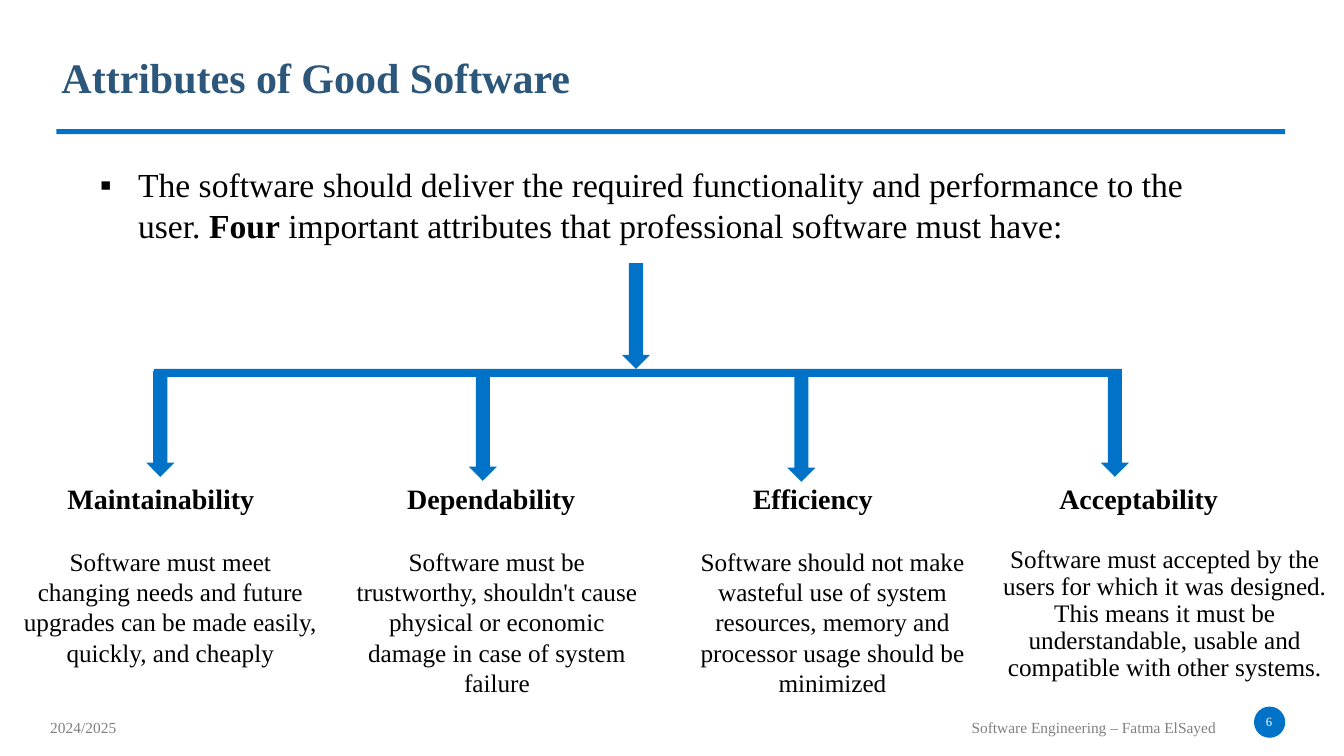
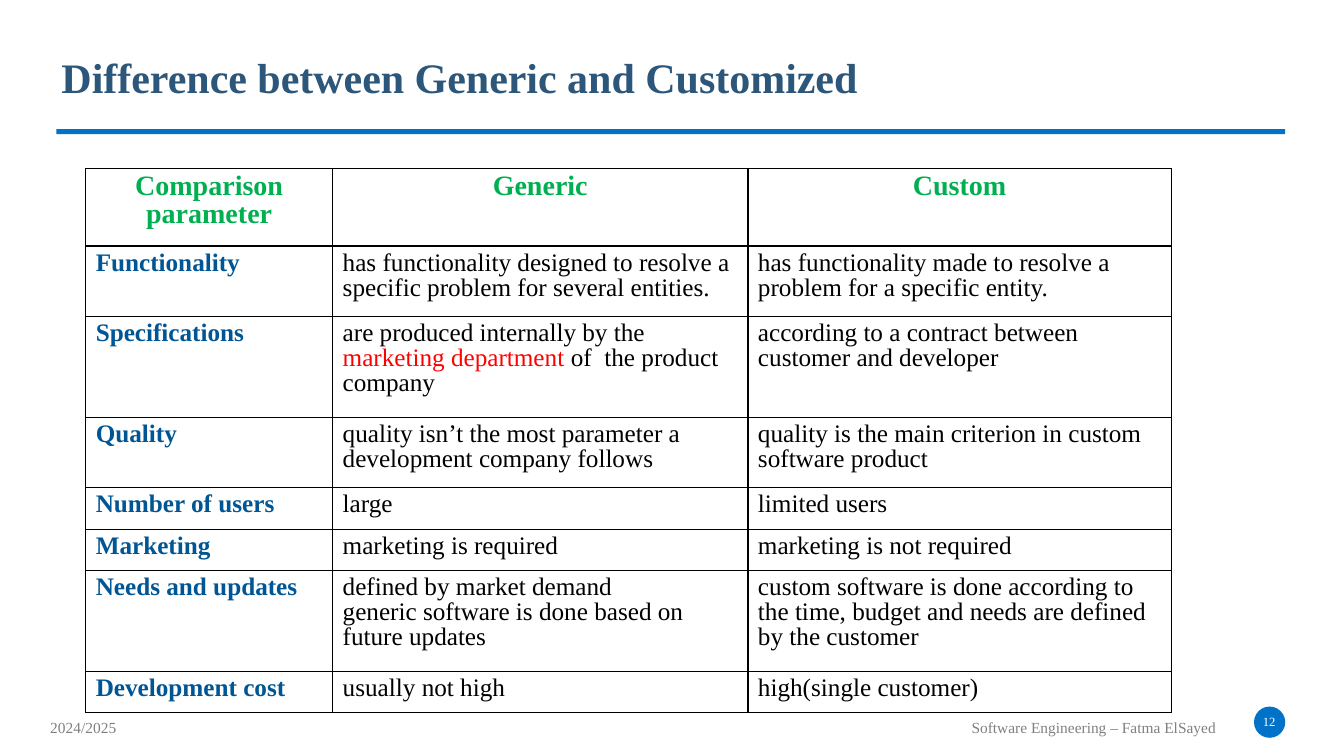
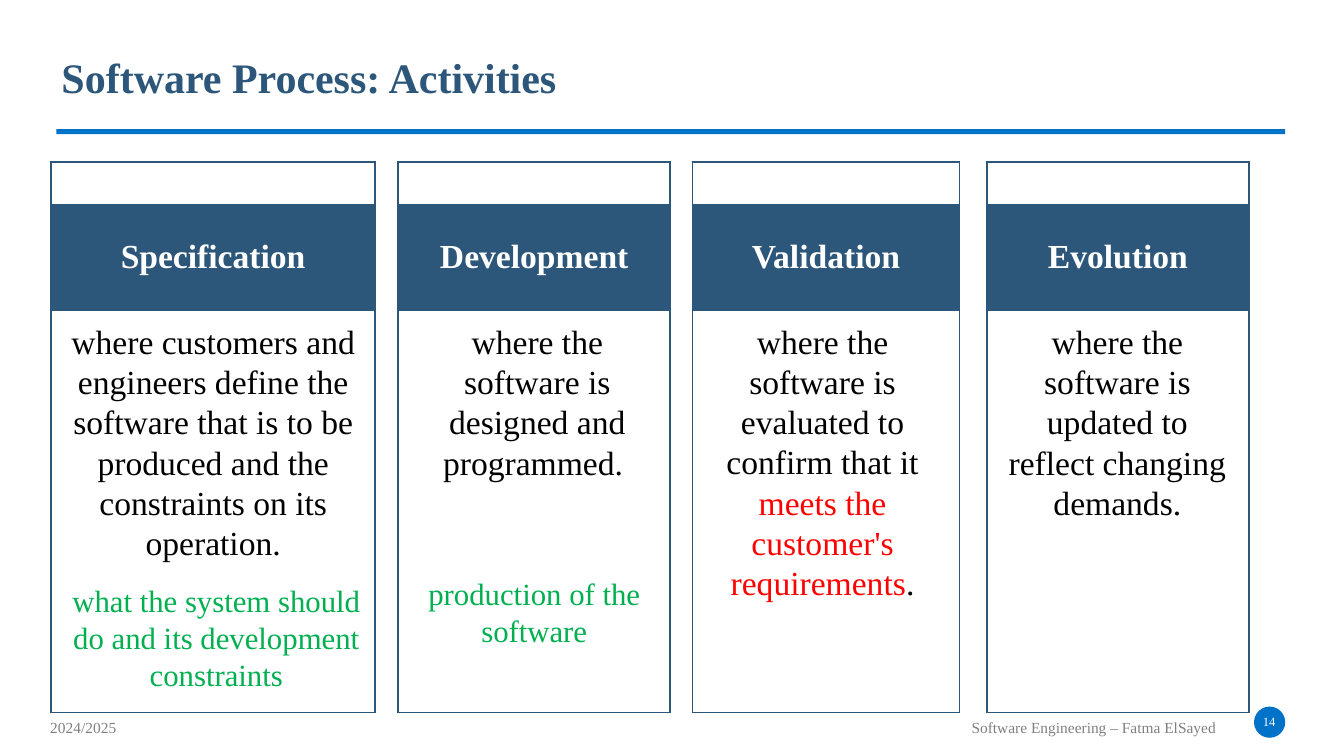
import collections
import dataclasses

import lxml.etree
import pptx
import pptx.dml.color
import pptx.enum.shapes
import pptx.enum.text
import pptx.oxml.ns
import pptx.util

Box = collections.namedtuple("Box", "x y w h")
Shape = pptx.enum.shapes.MSO_SHAPE
Align = pptx.enum.text.PP_ALIGN
Anchor = pptx.enum.text.MSO_ANCHOR
qn = pptx.oxml.ns.qn


@dataclasses.dataclass(frozen=True)
class Theme:
    """Colours, type sizes and the grid pitch of the deck."""
    font: str = "Times New Roman"
    blue: str = "0072C7"
    navy: str = "2C567A"
    label: str = "005695"
    green: str = "00B050"
    red: str = "FF0000"
    grey: str = "808080"
    black: str = "000000"
    white: str = "FFFFFF"
    title: int = 30
    lead: int = 24
    note: int = 22
    head: int = 20
    text: int = 18
    foot: int = 11
    page: int = 9
    tight: float = 0.9
    pitch: float = 0.1
    cols: float = 133.33
    rows: int = 75


T = Theme()
NO_STYLE = "{2D5ABB26-0587-4C30-8999-92F81FD0307C}"

TRAITS = [
    ("Maintainability", Box(5.7, 47.3, 20.7, 4.4), (14.5, 36.8), Box(1.3, 53.7, 31.2, 13.1), 1,
     "Software must meet changing needs and future upgrades can be made easily, quickly, and cheaply"),
    ("Dependability", Box(39.4, 47.3, 18.8, 4.4), (46.5, 37.2), Box(33.8, 53.7, 31, 16.2), 1,
     "Software must be trustworthy, shouldn't cause physical or economic damage in case of system failure"),
    ("Efficiency", Box(73.7, 47.3, 14, 4.4), (78.1, 37.3), Box(66.6, 53.7, 32, 16.2), 1,
     "Software should not make wasteful use of system resources, memory and processor usage should be minimized"),
    ("Acceptability", Box(104.1, 47.3, 17.9, 4.4), (109.2, 36.8), Box(97.7, 53.7, 35.7, 14.6), T.tight,
     "Software must accepted by the users for which it was designed. This means it must be "
     "understandable, usable and compatible with other systems."),
]

ROWS = [
    ("Comparison parameter", "Generic", "Custom"),
    ("Functionality", "has functionality designed to resolve a specific problem for several entities.",
     "has functionality made to resolve a problem for a specific entity."),
    ("Specifications",
     [[("are produced internally by the ", {}), ("marketing department ", {"color": T.red}),
       ("of  the product company", {})]],
     "according to a contract between customer and developer"),
    ("Quality", "quality isn’t the most parameter a development company follows",
     "quality is the main criterion in custom software product"),
    ("Number of users", "large", "limited users"),
    ("Marketing", "marketing is required", "marketing is not required"),
    ("Needs and updates",
     [[("defined by market demand", {})], [("generic software is done based on future updates", {})]],
     "custom software is done according to the time, budget and needs are defined by the customer"),
    ("Development cost", "usually not high", "high(single customer)"),
]

STEPS = [
    ("Specification", Box(5.1, 16.1, 32.1, 54.5), 4.2, Box(-0.9, 15.2, 33.9, 25.2),
     "where customers and engineers define the software that is to be produced and the constraints on its operation.",
     Box(-0.6, 41.1, 33.9, 12.1), "what the system should do and its development constraints"),
    ("Development", Box(39.5, 16.1, 27, 54.5), 3.5, Box(0.7, 15.2, 26.2, 21.2),
     "where the software is designed and programmed. ",
     Box(1.2, 40.4, 24.6, 8.4), "production of the software"),
    ("Validation", Box(68.7, 16.1, 26.5, 54.5), 3.4, Box(-0.7, 15.2, 27.2, 29.3),
     [[("where the software is evaluated to confirm that it ", {}),
       ("meets the customer's requirements", {"color": T.red}), (".", {})]], None, None),
    ("Evolution", Box(97.9, 16.1, 26, 54.5), 3.4, Box(0.8, 15.2, 24.3, 21.2),
     "where the software is updated to reflect changing demands.", None, None),
]


def unit(n):
    """Turn a count of grid cells into a length."""
    return pptx.util.Inches(n * T.pitch)


def spot(box):
    """Turn a grid box into four lengths."""
    return [unit(n) for n in box]


def shift(box, base):
    """Move a box by the corner of its base."""
    return Box(box.x + base.x, box.y + base.y, box.w, box.h)


def rgb(code):
    """Read a hex colour."""
    return pptx.dml.color.RGBColor.from_string(code)


def write(frame, text, size, color=T.black, bold=False, align=Align.LEFT, line=1):
    """Fill a text frame with plain text or with paragraphs of styled runs."""
    paras = [[(text, {})]] if isinstance(text, str) else text
    for i, parts in enumerate(paras):
        para = frame.add_paragraph() if i else frame.paragraphs[0]
        para.alignment = align
        para.line_spacing = line
        para.space_before = pptx.util.Pt(0)
        for words, style in parts:
            run = para.add_run()
            run.text = words
            run.font.name = T.font
            run.font.size = pptx.util.Pt(size)
            run.font.bold = style.get("bold", bold)
            run.font.color.rgb = rgb(style.get("color", color))


def label(slide, box, text, size, wrap=True, inset=True, anchor=Anchor.TOP, **style):
    """Add a text box."""
    shape = slide.shapes.add_textbox(*spot(box))
    frame = shape.text_frame
    frame.word_wrap = wrap
    frame.vertical_anchor = anchor
    if not inset:
        clear(frame)
    write(frame, text, size, **style)
    return shape


def clear(frame):
    """Drop the insets of a text frame."""
    frame.margin_left = frame.margin_right = frame.margin_top = frame.margin_bottom = 0


def solid(slide, kind, box):
    """Add a plain blue shape."""
    shape = slide.shapes.add_shape(kind, *spot(box))
    shape.shadow.inherit = False
    shape.fill.solid()
    shape.fill.fore_color.rgb = rgb(T.blue)
    shape.line.fill.background()
    return shape


def brand(deck, slide):
    """Build the shared rule, disc and footers and hand them to the master."""
    master = deck.slide_master
    parts = [
        label(slide, Box(95.4, 70.7, 26.4, 2.9), "Software Engineering – Fatma ElSayed",
              T.foot, wrap=False, color=T.grey),
        label(slide, Box(4, 70.7, 8.6, 2.9), "2024/2025", T.foot, wrap=False, color=T.grey),
        solid(slide, Shape.OVAL, Box(124.4, 70.1, 3.1, 3.1)),
        solid(slide, Shape.RECTANGLE, Box(5.6, 12.8, 121.9, 0.5)),
    ]
    for i, part in enumerate(parts):
        part.element.nvSpPr.cNvPr.set("id", str(100 + i))
        master.shapes.element.append(part.element)
    title = master.placeholders[0]
    title.left, title.top, title.width, title.height = spot(Box(5.1, 4.6, 124.4, 6.1))


def start(deck, form, title, page):
    """Add a slide with its title and page number."""
    slide = deck.slides.add_slide(deck.slide_layouts[form])
    frame = slide.shapes.title.text_frame
    frame.vertical_anchor = Anchor.TOP
    frame.auto_size = pptx.enum.text.MSO_AUTO_SIZE.NONE
    write(frame, title, T.title, color=T.navy, bold=True)
    label(slide, Box(124.3, 70.6, 3.2, 2), page, T.page, inset=False,
          anchor=Anchor.MIDDLE, color=T.white, align=Align.CENTER)
    return slide


def intro(slide, box):
    """Set the bulleted lead in the body placeholder."""
    body = slide.placeholders[1]
    body.left, body.top, body.width, body.height = spot(box)
    frame = body.text_frame
    frame.auto_size = pptx.enum.text.MSO_AUTO_SIZE.NONE
    frame.vertical_anchor = Anchor.TOP
    clear(frame)
    write(frame, [[("The software should deliver the required functionality and performance to the user. ", {}),
                   ("Four", {"bold": True}),
                   (" important attributes that professional software must have:", {})]],
          T.lead, align=Align.JUSTIFY)
    para = frame.paragraphs[0]
    para.space_after = pptx.util.Pt(6)
    props = para._p.get_or_add_pPr()
    props.set("marL", str(unit(3.8)))
    props.set("indent", str(-unit(3.8)))
    lxml.etree.SubElement(props, qn("a:buChar")).set("char", "▪")


def tree(slide, box):
    """Draw the stem, the bar and one branch for each trait."""
    size = (2.8, 10.5)
    solid(slide, Shape.DOWN_ARROW, Box(box.x + 46.4, box.y - size[1], *size))
    solid(slide, Shape.RECTANGLE, box)
    for name, head, tip, body, line, text in TRAITS:
        solid(slide, Shape.DOWN_ARROW, Box(*tip, *size))
        label(slide, head, name, T.head, wrap=False, bold=True)
        label(slide, body, text, T.text, align=Align.CENTER, line=line)


def edge(cell, sides, color, width):
    """Draw the named sides of a cell and hide the others."""
    props = cell._tc.get_or_add_tcPr()
    for side in "LRTB":
        line = lxml.etree.SubElement(props, qn("a:ln" + side))
        if side in sides:
            line.set("w", str(pptx.util.Pt(width)))
            fill = lxml.etree.SubElement(line, qn("a:solidFill"))
            lxml.etree.SubElement(fill, qn("a:srgbClr")).set("val", color)
        else:
            lxml.etree.SubElement(line, qn("a:noFill"))


def paint(cell, color):
    """Fill a cell."""
    cell.fill.solid()
    cell.fill.fore_color.rgb = rgb(color)


def grid(slide, box, cols, rows):
    """Add an unstyled table with the given columns and rows."""
    table = slide.shapes.add_table(len(rows), len(cols), *spot(box)).table
    table.first_row = table.horz_banding = False
    table._tbl.tblPr.find(qn("a:tableStyleId")).text = NO_STYLE
    for part, size in zip(table.columns, cols):
        part.width = unit(size)
    for part, size in zip(table.rows, rows):
        part.height = unit(size)
    return table


def matrix(slide, box):
    """Draw the table that compares both kinds of software."""
    table = grid(slide, box, (24.5, 41.2, 42), (7.7, 7, 10, 7, 4.1, 4.1, 10, 4.1))
    for r, row in enumerate(ROWS):
        for c, text in enumerate(row):
            cell = table.cell(r, c)
            edge(cell, "LRTB", T.black, 1)
            paint(cell, T.white)
            if r == 0:
                style = dict(size=T.head, color=T.green, bold=True, align=Align.CENTER)
            elif c == 0:
                style = dict(size=T.text, color=T.label, bold=True)
            else:
                style = dict(size=T.text)
            write(cell.text_frame, text, line=T.tight, **style)


def card(slide, box, name, side):
    """Draw one framed step with its heading band."""
    table = grid(slide, box, (side, box.w - 2 * side, side), (4.1, 10.7, 5.4, 7.8, 7.8, 12.2, 6.6))
    last = len(table.rows) - 1
    for r in range(last + 1):
        for c in range(3):
            cell = table.cell(r, c)
            wide = r in (0, 1, last)
            sides = ("L" if c == 0 else "") + ("R" if c == 2 or wide else "")
            sides += {0: "T", last: "B"}.get(r, "")
            edge(cell, sides, T.navy, 1.5)
            paint(cell, T.navy if r == 1 else T.white)
    for r in (0, 1, last):
        table.cell(r, 0).merge(table.cell(r, 2))
    table.cell(3, 1).merge(table.cell(5, 1))
    head = table.cell(1, 0)
    head.vertical_anchor = Anchor.MIDDLE
    write(head.text_frame, name, T.lead, color=T.white, bold=True, align=Align.CENTER)


def step(slide, name, box, side, body, text, foot, note):
    """Place a card with its text and its note."""
    card(slide, box, name, side)
    label(slide, shift(body, box), text, T.lead, align=Align.CENTER)
    if note:
        label(slide, shift(foot, box), note, T.note, color=T.green, align=Align.CENTER)


def main():
    """Build the deck."""
    deck = pptx.Presentation()
    deck.slide_width, deck.slide_height = unit(T.cols), unit(T.rows)

    slide = start(deck, 1, "Attributes of Good Software", "6")
    brand(deck, slide)
    intro(slide, Box(9.9, 16.3, 107.5, 7.8))
    tree(slide, Box(15.3, 36.6, 96, 0.8))

    slide = start(deck, 5, "Difference between Generic and Customized", "12")
    matrix(slide, Box(8.5, 16.7, 107.7, 54))

    slide = start(deck, 5, "Software Process: Activities", "14")
    for part in STEPS:
        step(slide, *part)

    deck.save("out.pptx")


if __name__ == "__main__":
    main()
